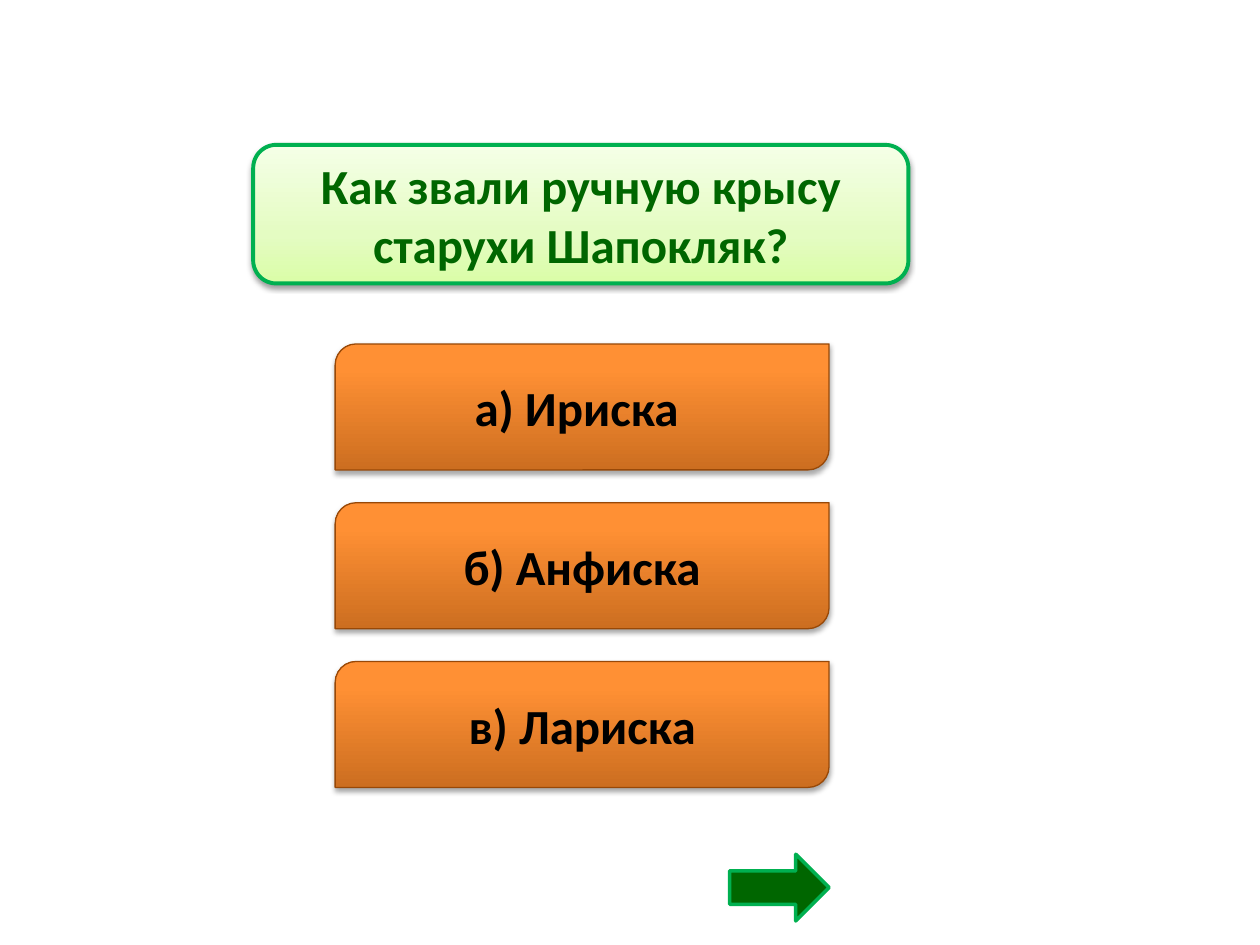
from lxml.etree import SubElement
from pptx import Presentation
from pptx.dml.color import RGBColor
from pptx.enum.shapes import MSO_SHAPE
from pptx.enum.text import MSO_ANCHOR, PP_ALIGN
from pptx.oxml.ns import qn
from pptx.util import Inches, Pt

COLORS = {
    "green_line": "00B050",
    "green_dark": "006600",
    "brown_line": "984807",
    "answer_text": "000000",
    "shadow": "000000",
}
QUESTION_STOPS = [(0, "DAFDA7"), (35, "E4FCC2"), (100, "F5FFE7")]
ANSWER_STOPS = [(0, "CC6E20"), (80, "FF9034"), (100, "FF9136")]
ANSWERS = ["а) Ириска ", "б) Анфиска", "в) Лариска"]


def add_outlined_shape(slide, kind, left, top, width, height, line_color, line_width):
    """Add a preset shape with a coloured outline and no inherited shadow."""
    shape = slide.shapes.add_shape(
        kind, Inches(left), Inches(top), Inches(width), Inches(height)
    )
    shape.line.color.rgb = RGBColor.from_string(COLORS[line_color])
    shape.line.width = Pt(line_width)
    shape.shadow.inherit = False
    return shape


def fill_gradient(shape, stops):
    """Fill a shape with gradient stops that run from bottom to top."""
    shape.fill.gradient()
    shape.fill.gradient_angle = 90
    stop_list = shape.element.spPr.find(qn("a:gradFill")).find(qn("a:gsLst"))
    for stop in list(stop_list):
        stop_list.remove(stop)
    for position, color in stops:
        stop = SubElement(stop_list, qn("a:gs"), pos=str(position * 1000))
        SubElement(stop, qn("a:srgbClr"), val=color)


def add_drop_shadow(shape, opacity, distance):
    """Add a soft black shadow straight below a shape."""
    effects = shape.element.spPr.find(qn("a:effectLst"))
    shadow = SubElement(
        effects, qn("a:outerShdw"), blurRad=str(Pt(3.1)), dist=str(Pt(distance)),
        dir="5400000", rotWithShape="0",
    )
    color = SubElement(shadow, qn("a:srgbClr"), val=COLORS["shadow"])
    SubElement(color, qn("a:alpha"), val=str(opacity * 1000))


def set_label(shape, text, color):
    """Write bold centred text in a shape."""
    text_frame = shape.text_frame
    text_frame.text = text
    text_frame.word_wrap = True
    text_frame.vertical_anchor = MSO_ANCHOR.MIDDLE
    paragraph = text_frame.paragraphs[0]
    paragraph.alignment = PP_ALIGN.CENTER
    font = paragraph.runs[0].font
    font.name = "Calibri"
    font.size = Pt(28)
    font.bold = True
    font.color.rgb = RGBColor.from_string(COLORS[color])


def add_question(slide, text):
    """Add the green question panel."""
    shape = add_outlined_shape(
        slide, MSO_SHAPE.ROUNDED_RECTANGLE, 2.01, 1.15, 5.2, 1.1, "green_line", 2.25
    )
    fill_gradient(shape, QUESTION_STOPS)
    add_drop_shadow(shape, 38, 1.6)
    set_label(shape, text, "green_dark")


def add_answer(slide, text, top):
    """Add one orange answer button."""
    shape = add_outlined_shape(
        slide, MSO_SHAPE.ROUND_2_DIAG_RECTANGLE, 2.66, top, 3.92, 1, "brown_line", 0.75
    )
    fill_gradient(shape, ANSWER_STOPS)
    add_drop_shadow(shape, 35, 1.8)
    set_label(shape, text, "answer_text")


def add_next_arrow(slide):
    """Add the green arrow that points to the next question."""
    arrow = add_outlined_shape(
        slide, MSO_SHAPE.RIGHT_ARROW, 5.79, 6.78, 0.79, 0.53, "green_line", 2
    )
    arrow.fill.solid()
    arrow.fill.fore_color.rgb = RGBColor.from_string(COLORS["green_dark"])


def main():
    """Build the quiz slide and save it."""
    presentation = Presentation()
    presentation.slide_width = Inches(10)
    presentation.slide_height = Inches(7.5)
    slide = presentation.slides.add_slide(presentation.slide_layouts[6])
    add_question(slide, "Как звали ручную крысу старухи Шапокляк?")
    for index, answer in enumerate(ANSWERS):
        add_answer(slide, answer, 2.73 + 1.26 * index)
    add_next_arrow(slide)
    presentation.save("out.pptx")


if __name__ == "__main__":
    main()
